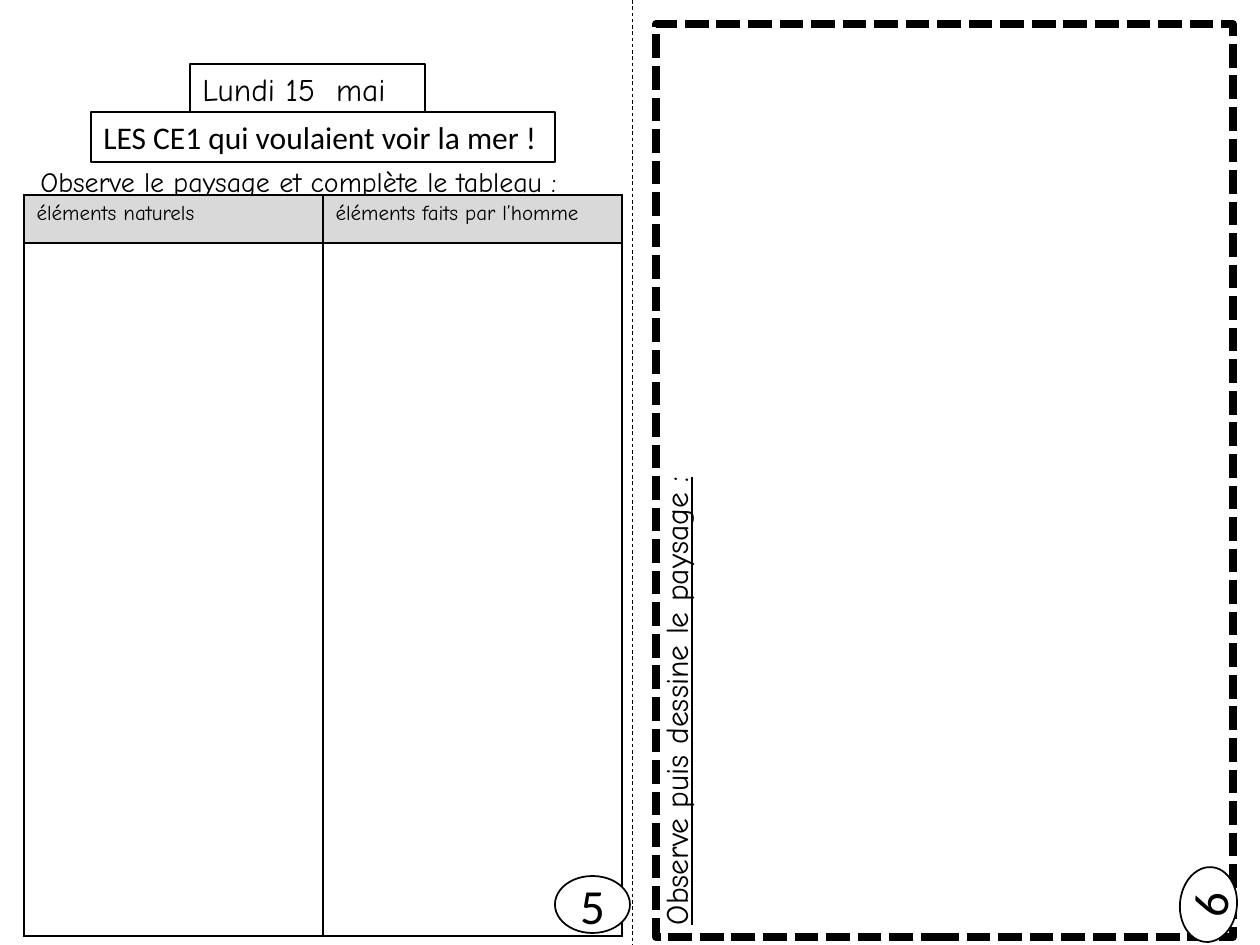
from lxml import etree
from pptx import Presentation
from pptx.dml.color import RGBColor
from pptx.enum.dml import MSO_LINE
from pptx.enum.shapes import MSO_CONNECTOR, MSO_SHAPE
from pptx.enum.text import MSO_ANCHOR, MSO_AUTO_SIZE, PP_ALIGN
from pptx.oxml.ns import qn
from pptx.util import Emu, Inches, Pt

RECT, OVAL = MSO_SHAPE.RECTANGLE, MSO_SHAPE.OVAL
LINE = MSO_CONNECTOR.STRAIGHT
DASH, DOTS = MSO_LINE.DASH, MSO_LINE.SQUARE_DOT
TOP, MID = MSO_ANCHOR.TOP, MSO_ANCHOR.MIDDLE
LEFT, MIDDLE = PP_ALIGN.LEFT, PP_ALIGN.CENTER
GROW, FIXED = MSO_AUTO_SIZE.SHAPE_TO_FIT_TEXT, MSO_AUTO_SIZE.NONE

HAND, PLAIN = "Comic Neue", "Calibri"
COLORS = {"ink": "000000", "paper": "FFFFFF", "head": "D9D9D9"}
SCALE = 914400 / 126


def px(n):
    return Emu(round(n * SCALE))


def color(name):
    return RGBColor.from_string(COLORS[name])


def write(frame, text, size=18, font=HAND, under=False, align=LEFT,
          anchor=TOP, wrap=True, grow=True):
    frame.word_wrap = wrap
    frame.auto_size = GROW if grow else FIXED
    frame.vertical_anchor = anchor
    para = frame.paragraphs[0]
    para.alignment = align
    run = para.add_run()
    run.text = text
    run.font.size = Pt(size)
    run.font.name = font
    run.font.underline = under
    run.font.color.rgb = color("ink")


class Page:
    def __init__(self, slide):
        self.slide = slide
        self.shapes = slide.shapes

    def pen(self, line, width, dash=None):
        line.color.rgb = color("ink")
        line.width = Pt(width)
        if dash:
            line.dash_style = dash

    def rule(self, x1, y1, x2, y2, width, dash):
        line = self.shapes.add_connector(LINE, px(x1), px(y1), px(x2), px(y2))
        self.pen(line.line, width, dash)
        etree.SubElement(line._element.spPr, qn("a:effectLst"))

    def shape(self, kind, box, text="", width=1, dash=None, turn=0, **style):
        item = self.shapes.add_shape(kind, *map(px, box))
        item.shadow.inherit = False
        item.fill.solid()
        item.fill.fore_color.rgb = color("paper")
        self.pen(item.line, width, dash)
        item.rotation = turn
        if text:
            write(item.text_frame, text, **style)

    def label(self, box, text, turn=0, **style):
        item = self.shapes.add_textbox(*map(px, box))
        item.rotation = turn
        write(item.text_frame, text, under=True, wrap=False, **style)

    def badge(self, x, y, text, turn=0):
        self.shape(OVAL, (x, y, 75, 57), text, turn=turn, size=28, font=PLAIN,
                   align=MIDDLE, anchor=MID, grow=False)

    def border(self, cell):
        props = cell._tc.get_or_add_tcPr()
        for spot, side in enumerate(("lnL", "lnR", "lnT", "lnB")):
            line = etree.Element(qn(f"a:{side}"), w=str(Pt(1)))
            fill = etree.SubElement(line, qn("a:solidFill"))
            etree.SubElement(fill, qn("a:srgbClr"), val=COLORS["ink"])
            props.insert(spot, line)

    def table(self, x, y, wide, rows, heads):
        count = len(heads)
        grid = self.shapes.add_table(len(rows), count, px(x), px(y),
                                     px(wide * count), px(sum(rows))).table
        for col in grid.columns:
            col.width = px(wide)
        for row, high in zip(grid.rows, rows):
            row.height = px(high)
        for cell in grid.iter_cells():
            cell.fill.background()
            self.border(cell)
        for spot, text in enumerate(heads):
            cell = grid.cell(0, spot)
            cell.fill.solid()
            cell.fill.fore_color.rgb = color("head")
            run = cell.text_frame.paragraphs[0].add_run()
            run.text = text
            run.font.size = Pt(12)
            run.font.name = HAND
            run.font.bold = False
            run.font.color.rgb = color("ink")


def main():
    deck = Presentation()
    deck.slide_width, deck.slide_height = Inches(10), Inches(7.5)
    page = Page(deck.slides.add_slide(deck.slide_layouts[6]))

    page.rule(632, 0, 632, 945, 0.5, DASH)
    page.shape(RECT, (190, 64, 235, 51), "Lundi 15  mai")
    page.label((28, 158, 597, 47),
               "Observe le paysage et complète le tableau :", size=16)
    page.table(24, 195, 299, (48, 693),
               ("éléments naturels", "éléments faits par l’homme"))
    page.shape(RECT, (656, 24, 577, 913), width=4.5, dash=DOTS)
    page.label((417, 653, 518, 51), "Observe puis dessine le paysage :",
               turn=270)
    page.badge(555, 876, "5")
    page.badge(1171, 876, "6", turn=275.5)
    page.shape(RECT, (91, 112, 464, 50), "LES CE1 qui voulaient voir la mer !",
               font=PLAIN, wrap=False)
    deck.save("out.pptx")


if __name__ == "__main__":
    main()
